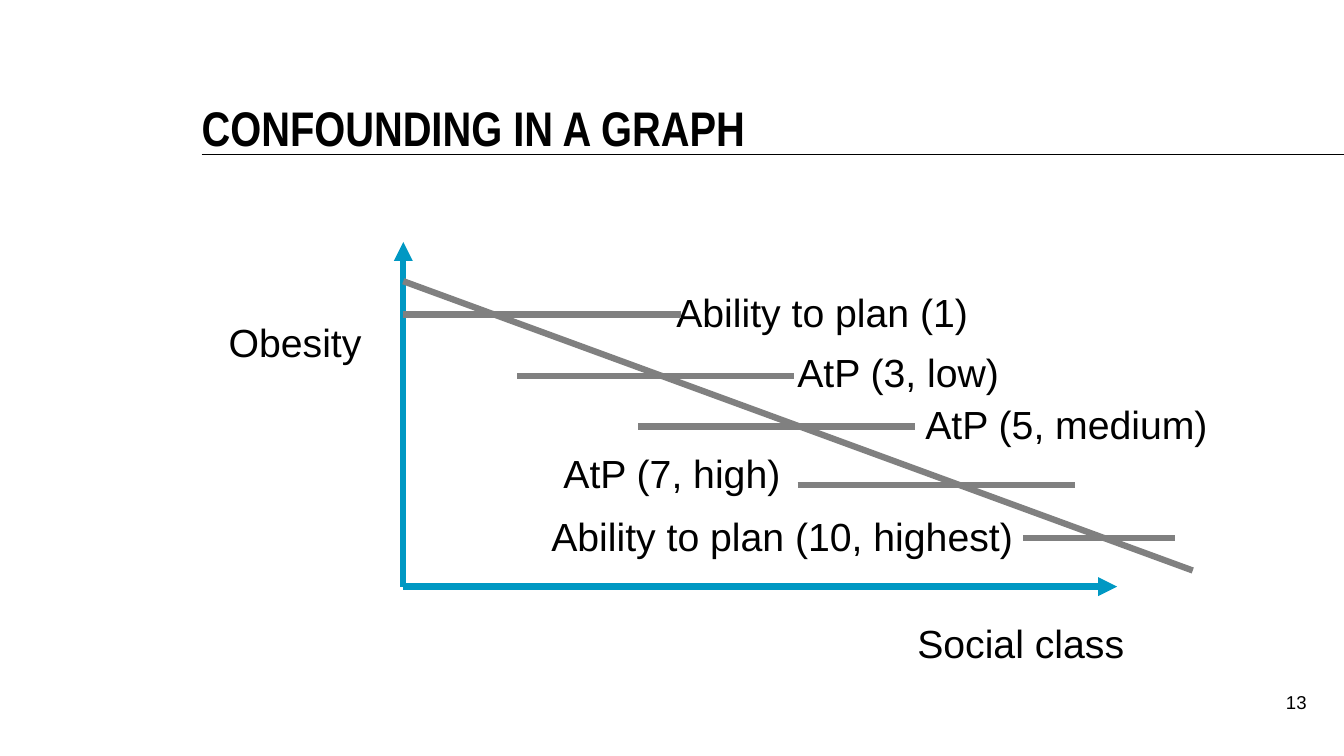
"""Build the slide that shows confounding between social class and obesity."""
from dataclasses import dataclass

import pptx
import pptx.dml.color
import pptx.enum.shapes
import pptx.enum.text
import pptx.oxml
import pptx.oxml.ns
import pptx.shapes.connector
import pptx.shapes.shapetree
import pptx.slide
import pptx.text.text
import pptx.util

Inches = pptx.util.Inches
Pt = pptx.util.Pt
Align = pptx.enum.text.PP_ALIGN
Anchor = pptx.enum.text.MSO_ANCHOR
AutoSize = pptx.enum.text.MSO_AUTO_SIZE
Tree = pptx.shapes.shapetree.SlideShapes | pptx.shapes.shapetree.GroupShapes
Point = tuple[float, float]


@dataclass(frozen=True)
class Theme:
    ink: str = "000000"
    axis: str = "0098C3"
    trend: str = "808080"
    body_font: str = "Arial"
    title_font: str = "Arial Narrow"
    title_size: float = 34.7
    label_size: float = 28
    number_size: float = 13.3
    rule_width: float = 1
    graph_width: float = 4.5


@dataclass(frozen=True)
class Label:
    text: str
    left: float
    top: float
    width: float
    height: float = 0.57


@dataclass(frozen=True)
class Stroke:
    start: Point
    end: Point
    color: str
    width: float
    arrow: bool = False


@dataclass(frozen=True)
class Level:
    label: Label
    line_left: float
    line_y: float
    line_length: float = 2.75


THEME = Theme()
SLIDE_SIZE = (13.33, 7.5)
ORIGIN = (4, 5.82)
RULE = Stroke((2, 1.53), (SLIDE_SIZE[0], 1.53), THEME.ink, THEME.rule_width)
GRAPH = (
    Stroke(ORIGIN, (4, 2.4), THEME.axis, THEME.graph_width, True),
    Stroke(ORIGIN, (11.08, 5.82), THEME.axis, THEME.graph_width, True),
    Stroke((4, 2.79), (11.83, 5.66), THEME.trend, THEME.graph_width),
)
AXIS_LABELS = (
    Label("Obesity", 2.17, 3.11, 1.67),
    Label("Social class", 9, 6.09, 2.83),
)
LEVELS = (
    Level(Label("Ability to plan (1)", 6.61, 2.81, 3.3), 4, 3.12),
    Level(Label("AtP (3, low)", 7.81, 3.41, 3.58), 5.13, 3.73),
    Level(Label("AtP (5, medium)", 9.08, 3.92, 4.25), 6.33, 4.23),
    Level(Label("AtP (7, high)", 5.49, 4.41, 3.84), 7.91, 4.81),
    Level(Label("Ability to plan (10, highest)", 5.37, 5.03, 5.46), 10.15, 5.34, 1.5),
)


def apply(target: object, formats: dict[str, object]) -> None:
    for name, value in formats.items():
        setattr(target, name, value)


def write(tf: pptx.text.text.TextFrame, text: str, font: str, size: float,
          frame: dict[str, object], paragraph: dict[str, object], bold: bool = False) -> None:
    apply(tf, {"word_wrap": True} | frame)
    p = tf.paragraphs[0]
    apply(p, paragraph)
    r = p.add_run()
    r.text = text
    apply(r.font, {"name": font, "size": Pt(size), "bold": bold})
    r.font.color.rgb = pptx.dml.color.RGBColor.from_string(THEME.ink)


def add_stroke(shapes: Tree, stroke: Stroke) -> pptx.shapes.connector.Connector:
    ends = (Inches(v) for v in stroke.start + stroke.end)
    sp = shapes.add_connector(pptx.enum.shapes.MSO_CONNECTOR.STRAIGHT, *ends)
    sp.line.color.rgb = pptx.dml.color.RGBColor.from_string(stroke.color)
    sp.line.width = Pt(stroke.width)
    if stroke.arrow:
        tail = pptx.oxml.parse_xml(
            f'<a:tailEnd {pptx.oxml.ns.nsdecls("a")} type="triangle"/>')
        sp.line._get_or_add_ln().append(tail)
    sp._element.spPr.append(
        pptx.oxml.parse_xml(f'<a:effectLst {pptx.oxml.ns.nsdecls("a")}/>'))
    return sp


def add_label(shapes: Tree, label: Label) -> None:
    box = (Inches(v) for v in (label.left, label.top, label.width, label.height))
    sp = shapes.add_textbox(*box)
    write(sp.text_frame, label.text, THEME.body_font, THEME.label_size,
          {"auto_size": AutoSize.SHAPE_TO_FIT_TEXT}, {})


def add_level(shapes: Tree, level: Level) -> None:
    group = shapes.add_group_shape().shapes
    add_label(group, level.label)
    end = (level.line_left + level.line_length, level.line_y)
    add_stroke(group, Stroke((level.line_left, level.line_y), end,
                             THEME.trend, THEME.graph_width))


def add_title(s: pptx.slide.Slide, text: str) -> None:
    sp = s.shapes.title
    apply(sp, {"left": Inches(2), "top": Inches(0.75),
               "width": Inches(10.92), "height": Inches(0.8)})
    frame = {"auto_size": AutoSize.NONE, "vertical_anchor": Anchor.BOTTOM,
             "margin_left": 0, "margin_top": 0, "margin_right": 0, "margin_bottom": 0}
    write(sp.text_frame, text, THEME.title_font, THEME.title_size, frame,
          {"alignment": Align.LEFT, "line_spacing": Pt(33.3)}, bold=True)


def add_page_number(s: pptx.slide.Slide, text: str) -> None:
    sp = s.shapes.add_textbox(Inches(12.41), Inches(6.75), Inches(0.55), Inches(0.52))
    write(sp.text_frame, text, THEME.body_font, THEME.number_size, {"margin_right": 0},
          {"alignment": Align.RIGHT, "line_spacing": Pt(20)})


def main() -> None:
    prs = pptx.Presentation()
    prs.slide_width, prs.slide_height = (Inches(v) for v in SLIDE_SIZE)
    s = prs.slides.add_slide(prs.slide_layouts.get_by_name("Title Only"))
    add_stroke(s.shapes, RULE)
    add_page_number(s, "13")
    add_title(s, "CONFOUNDING IN A GRAPH")
    for stroke in GRAPH:
        add_stroke(s.shapes, stroke)
    for label in AXIS_LABELS:
        add_label(s.shapes, label)
    for level in LEVELS:
        add_level(s.shapes, level)
    prs.save("out.pptx")


if __name__ == "__main__":
    main()
